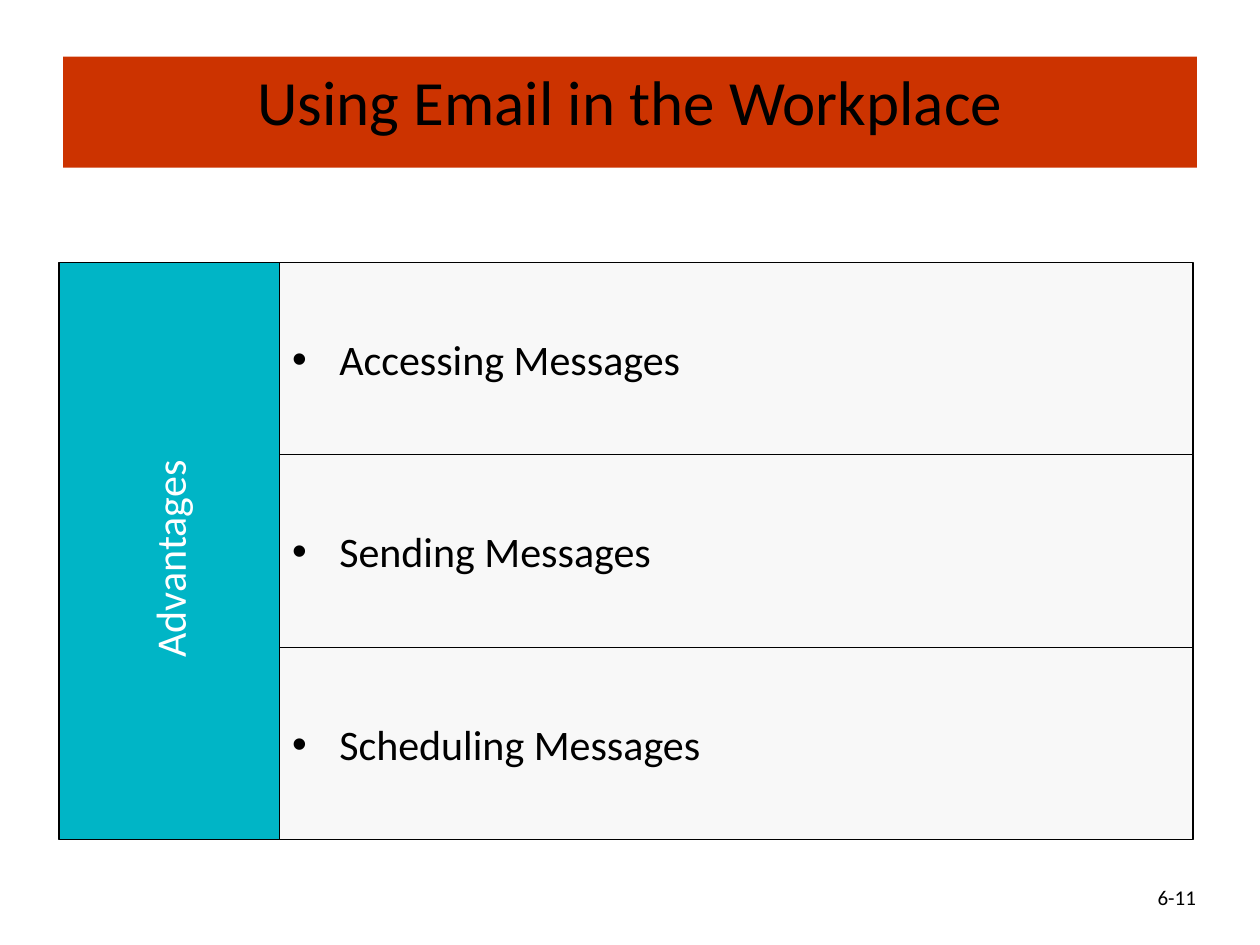
from dataclasses import dataclass

from lxml.etree import SubElement
from pptx import Presentation
from pptx.dml.color import RGBColor as RGB
from pptx.enum.shapes import MSO_SHAPE as Shape
from pptx.enum.text import MSO_ANCHOR as Anchor, MSO_AUTO_SIZE as AutoSize, PP_ALIGN as Align
from pptx.oxml.ns import qn
from pptx.util import Cm, Pt


@dataclass(frozen=True)
class Theme:
    font: str = "Calibri"
    title_size: int = 36
    body_size: int = 24
    number_size: int = 12
    banner: RGB = RGB(0xCC, 0x33, 0x00)
    accent: RGB = RGB(0x00, 0xB5, 0xC6)
    panel: RGB = RGB(0xF8, 0xF8, 0xF8)
    dark: RGB = RGB(0, 0, 0)
    light: RGB = RGB(0xFF, 0xFF, 0xFF)


THEME = Theme()
TITLE_ONLY = 5


def place(sp, left, top, width, height):
    sp.left, sp.top, sp.width, sp.height = Cm(left), Cm(top), Cm(width), Cm(height)


def fill(sp, color):
    sp.fill.solid()
    sp.fill.fore_color.rgb = color


def write(sp, text, size, color, align, anchor):
    tf = sp.text_frame
    tf.text = text
    tf.word_wrap = True
    tf.auto_size = AutoSize.NONE
    tf.vertical_anchor = anchor
    p = tf.paragraphs[0]
    p.alignment = align
    font = p.runs[0].font
    font.name, font.size, font.color.rgb = THEME.font, Pt(size), color
    return p


def add_bullet(p, indent):
    pPr = p._p.get_or_add_pPr()
    pPr.set("marL", str(Cm(indent)))
    pPr.set("indent", str(-Cm(indent)))
    SubElement(pPr, qn("a:buFont"), typeface="Arial")
    SubElement(pPr, qn("a:buChar"), char="•")


def add_panel(slide, box, color):
    """Add a filled rectangle with a thin dark outline."""
    sp = slide.shapes.add_shape(Shape.RECTANGLE, *map(Cm, box))
    sp.shadow.inherit = False
    fill(sp, color)
    sp.line.color.rgb = THEME.dark
    sp.line.width = Pt(0.75)
    return sp


def add_banner(slide, box, text):
    title = slide.shapes.title
    place(title, *box)
    fill(title, THEME.banner)
    write(title, text, THEME.title_size, THEME.dark, Align.CENTER, Anchor.TOP)


def add_side_heading(slide, box, text):
    """Add the coloured column with its heading reading upwards."""
    left, top, width, height = box
    add_panel(slide, box, THEME.accent)
    label_w, label_h = 4.78, 1.28
    label = slide.shapes.add_textbox(0, 0, 0, 0)
    place(label, left + (width - label_w) / 2, top + (height - label_h) / 2, label_w, label_h)
    label.rotation = 270
    write(label, text, THEME.body_size, THEME.light, Align.LEFT, Anchor.TOP)
    label.text_frame.word_wrap = False


def add_rows(slide, box, items):
    left, top, width, height = box
    row_h = height / len(items)
    for i, item in enumerate(items):
        row = add_panel(slide, (left, top + i * row_h, width, row_h), THEME.panel)
        p = write(row, item, THEME.body_size, THEME.dark, Align.LEFT, Anchor.MIDDLE)
        add_bullet(p, 0.95)


def add_topic_block(slide, box, heading, items):
    left, top, width, height = box
    side_w = 4.45
    add_side_heading(slide, (left, top, side_w, height), heading)
    add_rows(slide, (left + side_w, top, width - side_w, height), items)


def add_page_number(slide, box, text):
    sp = slide.shapes.add_textbox(*map(Cm, box))
    write(sp, text, THEME.number_size, THEME.dark, Align.RIGHT, Anchor.MIDDLE)


def main():
    prs = Presentation()
    prs.slide_width, prs.slide_height = Cm(25.4), Cm(19.05)
    slide = prs.slides.add_slide(prs.slide_layouts[TITLE_ONLY])
    add_banner(slide, (1.27, 1.14, 22.86, 2.24), "Using Email in the Workplace")
    add_topic_block(slide, (1.19, 5.29, 22.86, 11.64), "Advantages",
                    ["Accessing Messages", "Sending Messages", "Scheduling Messages"])
    add_page_number(slide, (22.66, 17.78, 1.7, 0.61), "6-11")
    prs.save("out.pptx")


if __name__ == "__main__":
    main()
